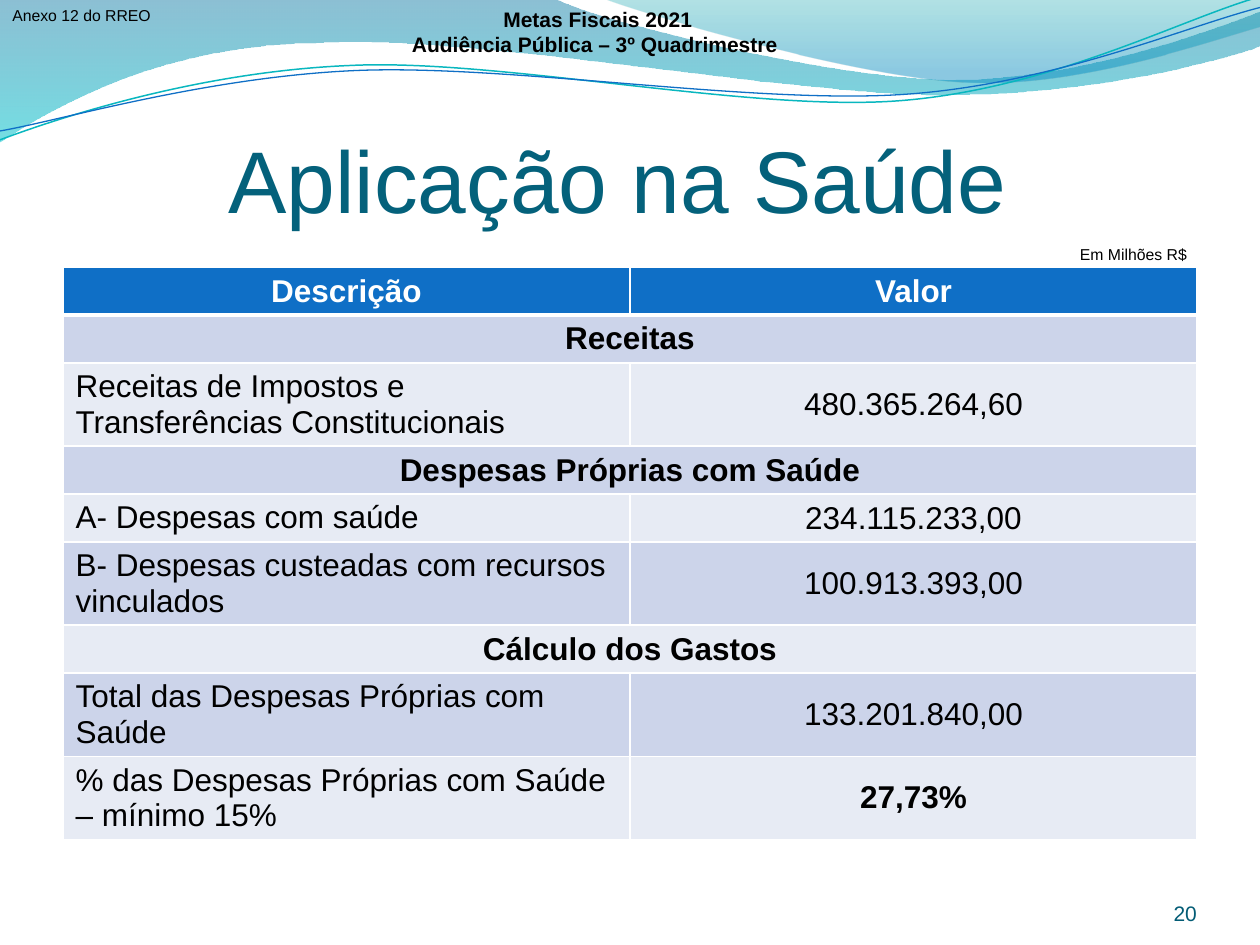
from collections import namedtuple
from math import cos, radians, sin

from lxml.etree import SubElement
from pptx import Presentation
from pptx.dml.color import RGBColor
from pptx.enum.text import MSO_ANCHOR as Anchor, MSO_AUTO_SIZE as Fit, PP_ALIGN as Align
from pptx.oxml.ns import qn
from pptx.util import Inches, Pt

# The page is a grid of 10 columns by 7.5 rows
COLUMNS, ROWS = 10, 7.5
UNIT = Inches(1)
FONT = "Arial"
COLORS = {
    "white": "FFFFFF", "black": "000000", "title": "04617B", "number": "035C75",
    "header": "0F6FC6", "odd": "CCD4EA", "even": "E7EBF4",
    "deep": "0074A0", "cyan": "00C4CD", "blue": "008ABF", "teal": "00A0A8",
    "teal line": "09B7BF", "blue line": "0F6FC6",
}
Box = namedtuple("Box", "left top width height")

# Waves: a start point, then straight (2 numbers) or curved (6 numbers) steps
BROAD_WAVE = [
    (0, 0), (4.4, -0.01), (4.76, 0.17, 6.64, 0.63, 7.58, 0.63),
    (8.53, 0.63, 9.58, 0.26, 10, 0.09), (10.01, 0.36),
    (9.83, 0.44, 8.7, 0.76, 7.46, 0.75), (6.22, 0.75, 3.82, 0.28, 2.57, 0.34),
    (1.29, 0.35, 0.46, 0.83, -0.01, 1.13), (0, 0),
]
RIGHT_WAVE = [
    (4.79, -0.01), (5.09, 0.11, 6.82, 0.62, 7.69, 0.65),
    (8.56, 0.69, 9.61, 0.32, 10, 0.21), (10, 0), (4.79, -0.01),
]
TEAL_CURVE = [
    (0, 1.11), (0.48, 0.93, 1.58, 0.57, 2.77, 0.52),
    (3.95, 0.46, 5.93, 0.89, 7.13, 0.8), (8.33, 0.71, 9.38, 0.15, 9.98, -0.02),
]
BLUE_CURVE = [
    (0, 1.04), (0.47, 0.96, 1.64, 0.61, 2.83, 0.56),
    (4.03, 0.51, 5.97, 0.83, 7.17, 0.75), (8.36, 0.67, 9.41, 0.21, 10, 0.06),
]
TILT = -2.7

# Table rows: one text makes a section heading across both columns
TABLE = [
    ("Descrição", "Valor"),
    ("Receitas",),
    ("Receitas de Impostos e Transferências Constitucionais", "480.365.264,60"),
    ("Despesas Próprias com Saúde",),
    ("A- Despesas com saúde", "234.115.233,00"),
    ("B- Despesas custeadas com recursos vinculados", "100.913.393,00"),
    ("Cálculo dos Gastos",),
    ("Total das Despesas Próprias com Saúde", "133.201.840,00"),
    ("% das Despesas Próprias com Saúde – mínimo 15%", "27,73%"),
]
ROW_LINES = [1, 1, 2, 1, 1, 2, 1, 2, 2]
ROW_HEIGHTS = {1: 0.38, 2: 0.66}


def rgb(name):
    return RGBColor.from_string(COLORS[name])


def grid(*cells):
    return [round(cell * UNIT) for cell in cells]


def write(frame, text, size=18, color="black", bold=False, align=Align.LEFT):
    for index, line in enumerate(text.split("\n")):
        para = frame.paragraphs[0] if index == 0 else frame.add_paragraph()
        para.alignment = align
        span = para.add_run()
        span.text = line
        font = span.font
        font.name, font.size, font.bold = FONT, Pt(size), bold
        font.color.rgb = rgb(color)


def add_text(page, box, text, anchor=Anchor.TOP, insets=(0.1, 0.05, 0.1, 0.05),
             wrap=True, fit=Fit.NONE, **style):
    frame = page.shapes.add_textbox(*grid(*box)).text_frame
    frame.word_wrap = wrap
    frame.auto_size = fit
    frame.vertical_anchor = anchor
    (frame.margin_left, frame.margin_top,
     frame.margin_right, frame.margin_bottom) = grid(*insets)
    write(frame, text, **style)


def pairs(step):
    return list(zip(step[::2], step[1::2]))


def turn(point, center, degrees):
    angle = radians(degrees)
    x, y = point[0] - center[0], point[1] - center[1]
    return (center[0] + x * cos(angle) - y * sin(angle),
            center[1] + x * sin(angle) + y * cos(angle))


def add_outline(page, box, steps, close, tilt=0, center=(0, 0)):
    """Draw all points as lines, then join each group of three into a curve."""
    points = [turn(point, center, -tilt) for step in steps for point in pairs(step)]
    points = [grid(box.left + x, box.top + y) for x, y in points]
    builder = page.shapes.build_freeform(*points[0], scale=1.0)
    builder.add_line_segments(points[1:], close=close)
    shape = builder.convert_to_shape()
    lines = iter(list(shape.element.spPr.iter(qn("a:lnTo"))))
    for step in steps[1:]:
        group = [next(lines) for _ in pairs(step)]
        if len(group) == 3:
            curve = SubElement(group[0].getparent(), qn("a:cubicBezTo"))
            group[0].addprevious(curve)
            for line in group:
                curve.append(line[0])
                line.getparent().remove(line)
    shape.rotation = tilt
    shape.shadow.inherit = False
    return shape


def add_wave(page, box, steps, stops, angle):
    shape = add_outline(page, box, steps, close=True)
    shape.line.fill.background()
    shape.fill.gradient()
    shape.fill.gradient_angle = angle
    for stop, (position, color, _) in zip(shape.fill.gradient_stops, stops):
        stop.position = position
        stop.color.rgb = rgb(color)
    for tint, (_, _, opacity) in zip(shape.element.spPr.iter(qn("a:srgbClr")), stops):
        SubElement(tint, qn("a:alpha"), val=str(opacity * 1000))


def add_curve(page, box, steps, center, color, width):
    shape = add_outline(page, box, steps, close=False, tilt=TILT, center=center)
    shape.fill.background()
    shape.line.color.rgb = rgb(color)
    shape.line.width = Pt(width)


def add_waves(page, box):
    add_wave(page, box, BROAD_WAVE, [(0, "deep", 45), (1, "cyan", 55)], 270)
    add_wave(page, box, RIGHT_WAVE, [(0.2, "blue", 45), (1, "teal", 30)], 90)
    add_curve(page, box, TEAL_CURVE, (4.99, 0.57), "teal line", 0.85)
    add_curve(page, box, BLUE_CURVE, (5, 0.59), "blue line", 0.75)


def add_borders(cell, top, bottom):
    properties = cell._tc.get_or_add_tcPr()
    for side, width in (("L", 0.96), ("R", 0.96), ("T", top), ("B", bottom)):
        line = SubElement(properties, qn(f"a:ln{side}"), w=str(Pt(width)))
        fill = SubElement(line, qn("a:solidFill"))
        SubElement(fill, qn("a:srgbClr"), val=COLORS["white"])


def add_spending_table(page, box):
    holder = page.shapes.add_table(len(TABLE), 2, *grid(*box))
    table = holder.table
    for column in table.columns:
        column.width = grid(box.width / 2)[0]
    for number, (texts, lines) in enumerate(zip(TABLE, ROW_LINES)):
        table.rows[number].height = grid(ROW_HEIGHTS[lines])[0]
        header, section = number == 0, len(texts) == 1
        fill = "header" if header else "odd" if number % 2 else "even"
        for side in (0, 1):
            cell = table.cell(number, side)
            add_borders(cell, 3 if number == 1 else 0.96, 3 if header else 0.96)
            cell.fill.solid()
            cell.fill.fore_color.rgb = rgb(fill)
        if section:
            table.cell(number, 0).merge(table.cell(number, 1))
        for side, text in enumerate(texts):
            cell = table.cell(number, side)
            value = side == 1 and not header
            if value:
                cell.vertical_anchor = Anchor.MIDDLE
            write(cell.text_frame, text,
                  color="white" if header else "black",
                  bold=header or section or (value and text.endswith("%")),
                  align=Align.CENTER if header or section or value else Align.LEFT)
    holder.height = grid(box.height)[0]


def add_heading(page, box):
    add_text(page, Box(box.left, box.top, 1.36, 0.25), "Anexo 12 do RREO",
             size=9, wrap=False, fit=Fit.SHAPE_TO_FIT_TEXT)
    add_text(page, Box(box.left + 3.05, box.top, 3.39, 0.5),
             "Metas Fiscais 2021\nAudiência Pública – 3º Quadrimestre ",
             anchor=Anchor.MIDDLE, fit=Fit.SHAPE_TO_FIT_TEXT,
             size=12, bold=True, align=Align.CENTER)


def main():
    deck = Presentation()
    deck.slide_width, deck.slide_height = grid(COLUMNS, ROWS)
    page = deck.slides.add_slide(deck.slide_layouts[6])

    # Decoration and title
    add_waves(page, Box(0, 0, COLUMNS, 1.13))
    add_text(page, Box(0.5, 0.77, 9, 1.25), "Aplicação na Saúde ",
             anchor=Anchor.MIDDLE, insets=(0, 0.05, 0, 0),
             size=50, color="title", align=Align.CENTER)

    # Table, page number and small texts
    add_spending_table(page, Box(0.5, 2.12, 9, 4.8))
    add_text(page, Box(8.67, 6.95, 0.83, 0.4), "20", anchor=Anchor.BOTTOM,
             insets=(0, 0, 0, 0), size=12, color="number", align=Align.RIGHT)
    add_text(page, Box(8.47, 1.89, 1.05, 0.25), "Em Milhões R$", size=9,
             wrap=False, fit=Fit.SHAPE_TO_FIT_TEXT, align=Align.CENTER)
    add_heading(page, Box(0, 0, COLUMNS, 0.5))
    deck.save("out.pptx")


if __name__ == "__main__":
    main()
